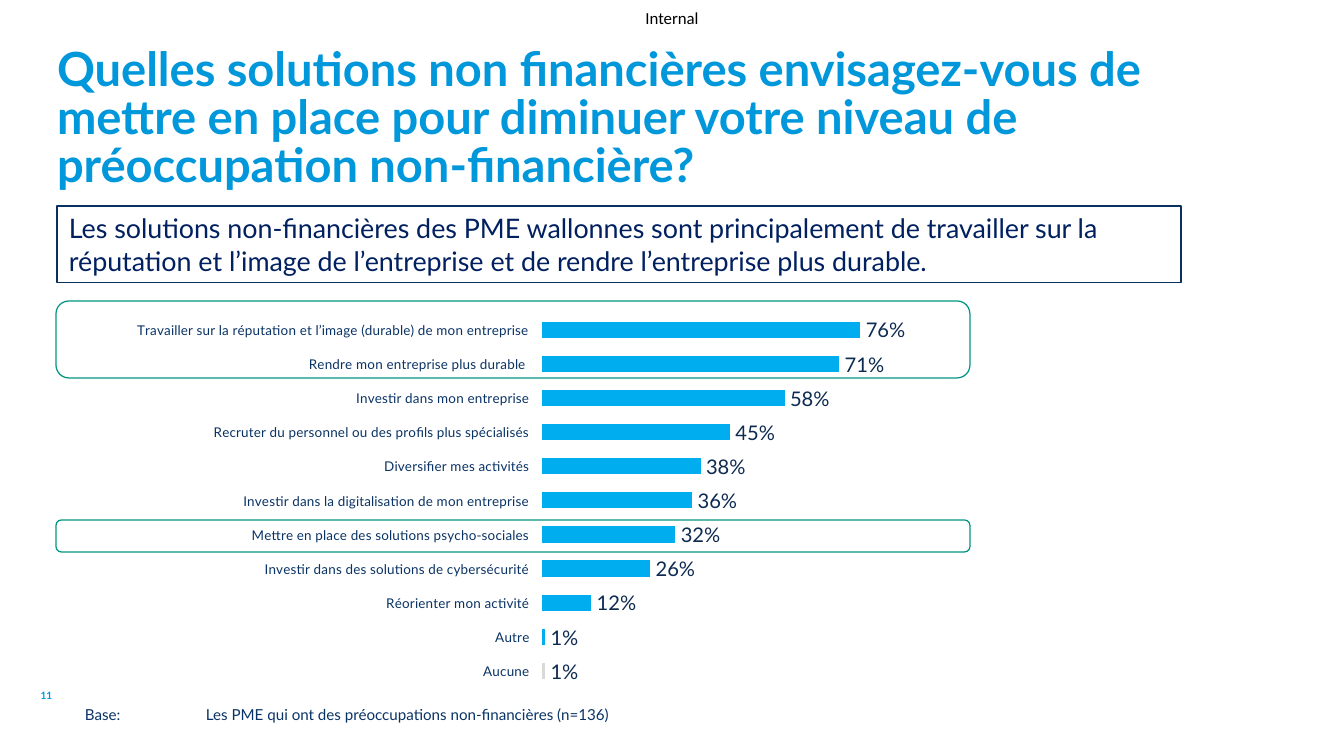
from lxml import etree
from pptx import Presentation
from pptx.chart.data import CategoryChartData
from pptx.dml.color import RGBColor
from pptx.enum.chart import XL_CHART_TYPE, XL_LABEL_POSITION, XL_TICK_LABEL_POSITION, XL_TICK_MARK
from pptx.enum.shapes import MSO_SHAPE
from pptx.enum.text import MSO_ANCHOR, PP_ALIGN
from pptx.oxml import parse_xml
from pptx.oxml.ns import nsdecls, qn
from pptx.util import Pt

BAR = XL_CHART_TYPE.BAR_CLUSTERED
OUTSIDE = XL_LABEL_POSITION.OUTSIDE_END
LOW = XL_TICK_LABEL_POSITION.LOW
NO_TICK = XL_TICK_MARK.NONE
RECT, ROUND = MSO_SHAPE.RECTANGLE, MSO_SHAPE.ROUNDED_RECTANGLE
TOP, MIDDLE = MSO_ANCHOR.TOP, MSO_ANCHOR.MIDDLE
LEFT, CENTER = PP_ALIGN.LEFT, PP_ALIGN.CENTER

SCALE = 914400 / 121  # EMU per px
COLORS = {
    "black": "000000", "title": "0097DB", "number": "0096DC",
    "navy": "002060", "text": "0A3365", "border": "083060",
    "value": "0D2A50", "bar": "00AEEF", "gray": "D9D9D9",
    "white": "FFFFFF", "green": "009682",
}
ANSWERS = [
    ("Travailler sur la réputation et l’image (durable) de mon entreprise", 76),
    ("Rendre mon entreprise plus durable ", 71),
    ("Investir dans mon entreprise", 58),
    ("Recruter du personnel ou des profils plus spécialisés", 45),
    ("Diversifier mes activités", 38),
    ("Investir dans la digitalisation de mon entreprise", 36),
    ("Mettre en place des solutions psycho-sociales", 32),
    ("Investir dans des solutions de cybersécurité", 26),
    ("Réorienter mon activité", 12),
    ("Autre", 1),
    ("Aucune", 1),
]
# Inner plot area as shares of the chart frame
PLOT = {"x": 0.49, "y": 0.03, "w": 0.51, "h": 0.96}


def px(n):
    return round(n * SCALE)


def rgb(name):
    return RGBColor.from_string(COLORS[name])


def style(font, size, color, face="Lato", bold=False):
    font.size, font.name, font.bold = Pt(size), face, bold
    font.color.rgb = rgb(color)


def write(shape, text, size, color, face="Lato", bold=False,
          align=LEFT, anchor=TOP, inset=None, space=None, tab=None):
    frame = shape.text_frame
    frame.word_wrap = True
    frame.vertical_anchor = anchor
    if inset is not None:
        frame.margin_left = frame.margin_right = inset
        frame.margin_top = frame.margin_bottom = inset
    para = frame.paragraphs[0]
    para.alignment = align
    if tab:
        para._p.get_or_add_pPr().append(parse_xml(
            f'<a:tabLst {nsdecls("a")}><a:tab pos="{px(tab)}" algn="l"/></a:tabLst>'))
    if space:
        para.line_spacing = space
    run = para.add_run()
    run.text = text
    style(run.font, size, color, face, bold)


def add_text(slide, box, text, size, color, **opts):
    shape = slide.shapes.add_textbox(*map(px, box))
    write(shape, text, size, color, **opts)


def add_frame(slide, kind, box, color):
    shape = slide.shapes.add_shape(kind, *map(px, box))
    shape.shadow.inherit = False
    shape.fill.background()
    shape.line.color.rgb = rgb(color)
    shape.line.width = Pt(0.75)
    return shape


def set_plot(chart):
    area = chart._chartSpace.chart.plotArea
    for old in area.findall(qn("c:layout")):
        area.remove(old)
    layout = etree.Element(qn("c:layout"))
    manual = etree.SubElement(layout, qn("c:manualLayout"))
    parts = [("layoutTarget", "inner"), ("xMode", "edge"), ("yMode", "edge")]
    for tag, val in parts + list(PLOT.items()):
        etree.SubElement(manual, qn("c:" + tag)).set("val", str(val))
    area.insert(0, layout)


def add_bars(slide, box):
    data = CategoryChartData()
    data.categories = [name for name, _ in ANSWERS]
    data.add_series("Series 1", [val for _, val in ANSWERS])
    chart = slide.shapes.add_chart(BAR, *map(px, box), data).chart
    chart.has_legend = chart.has_title = False
    style(chart.font, 12, "value", "DejaVu Sans")
    set_plot(chart)

    # Axes
    cats, vals = chart.category_axis, chart.value_axis
    cats.reverse_order = True
    cats.major_tick_mark = cats.minor_tick_mark = NO_TICK
    cats.tick_label_position = LOW
    cats.format.line.fill.background()
    style(cats.tick_labels.font, 8, "text")
    vals.minimum_scale, vals.maximum_scale = 0, 100
    vals.has_major_gridlines = False
    vals.visible = False

    # Bars and their values
    plot = chart.plots[0]
    plot.gap_width = 95
    plot.vary_by_categories = False
    series = plot.series[0]
    last = series.points[len(ANSWERS) - 1]
    for part, color in ((series, "bar"), (last, "gray")):
        part.format.fill.solid()
        part.format.fill.fore_color.rgb = rgb(color)
        part.format.line.color.rgb = rgb("white")
        part.format.line.width = Pt(0.75)
    labels = series.data_labels
    labels.show_value = True
    labels.number_format = "0\\%"
    labels.number_format_is_linked = False
    labels.position = OUTSIDE
    style(labels.font, 12, "value")


def main():
    prs = Presentation()
    prs.slide_width, prs.slide_height = px(1344), px(756)
    slide = prs.slides.add_slide(prs.slide_layouts[6])

    # Marking and slide number
    add_text(slide, (627, 0, 90, 35), "Internal", 10, "black", face="Calibri",
             align=CENTER, anchor=MIDDLE, inset=0)
    add_text(slide, (0, 676, 93, 40), "11", 6, "number", bold=True,
             align=CENTER, anchor=MIDDLE)

    # Answers
    add_bars(slide, (137, 301, 825, 391))

    # Title and base
    add_text(slide, (57, 48, 1153, 145),
             "Quelles solutions non financières envisagez-vous de mettre en place "
             "pour diminuer votre niveau de préoccupation non-financière?",
             28, "title", bold=True, inset=0, space=0.85)
    add_text(slide, (85, 710, 1096, 21),
             "Base:\tLes PME qui ont des préoccupations non-financières (n=136)",
             9, "text", inset=0, space=Pt(8), tab=121)

    # Key message
    box = add_frame(slide, RECT, (57, 206, 1124, 77), "border")
    write(box, "Les solutions non-financières des PME wallonnes sont principalement "
          "de travailler sur la réputation et l’image de l’entreprise et de rendre "
          "l’entreprise plus durable.", 16, "navy")

    # Highlights
    for top, high in ((301, 77), (520, 32)):
        add_frame(slide, ROUND, (56, top, 914, high), "green")

    prs.save("out.pptx")


if __name__ == "__main__":
    main()
